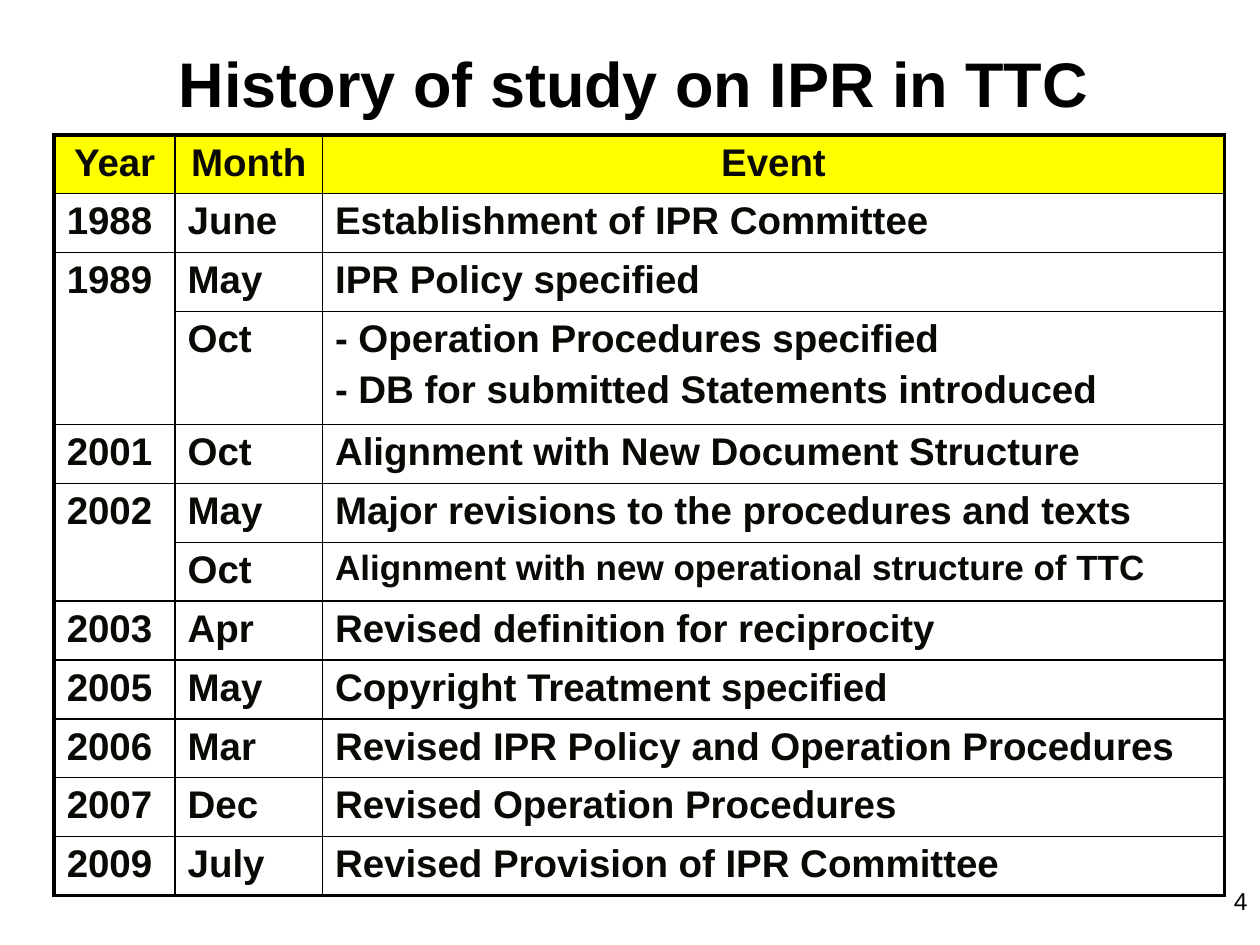
from lxml import etree
from pptx import Presentation
from pptx.dml.color import RGBColor
from pptx.enum.text import MSO_ANCHOR, PP_ALIGN
from pptx.oxml.ns import qn
from pptx.util import Inches, Pt

LEFT, CENTER, RIGHT = PP_ALIGN.LEFT, PP_ALIGN.CENTER, PP_ALIGN.RIGHT
MIDDLE = MSO_ANCHOR.MIDDLE
TITLE_ONLY = 5
BLACK, INK, YELLOW = "000000", "0B0905", "FFFF00"
THIN, THICK = 1, 2.25

TITLE_FONT = {"name": "Arial", "size": Pt(36), "bold": True}
NUMBER_FONT = {"name": "Arial", "size": Pt(14), "bold": False}
CELL_FONT = {"name": "Arial", "size": Pt(22), "bold": True}
SMALL_CELL_FONT = {**CELL_FONT, "size": Pt(20)}

COLUMN_WIDTHS = [0.96, 1.17, 7.16]
ROW_HEIGHT, TALL_ROW_HEIGHT = 0.46, 0.9
LONG_EVENT = "Alignment with new operational structure of TTC"
HISTORY = [
    ("Year", "Month", "Event"),
    ("1988", "June", "Establishment of IPR Committee"),
    ("1989", "May", "IPR Policy specified"),
    ("", "Oct", "- Operation Procedures specified\n"
                "- DB for submitted Statements introduced"),
    ("2001", "Oct", "Alignment with New Document Structure"),
    ("2002", "May", "Major revisions to the procedures and texts"),
    ("", "Oct", LONG_EVENT),
    ("2003", "Apr", "Revised definition for reciprocity"),
    ("2005", "May", "Copyright Treatment specified"),
    ("2006", "Mar", "Revised IPR Policy and Operation Procedures"),
    ("2007", "Dec", "Revised Operation Procedures"),
    ("2009", "July", "Revised Provision of IPR Committee"),
]


def color(value):
    return RGBColor.from_string(value)


def write(frame, text, font, ink, align):
    frame.text = text
    for index, para in enumerate(frame.paragraphs):
        para.alignment = align
        if index:
            para.space_before = Pt(font["size"].pt * 0.2)
        for target in [para.font] + [span.font for span in para.runs]:
            for name, value in font.items():
                setattr(target, name, value)
            target.color.rgb = color(ink)


def place(shape, box):
    for name, value in zip(("left", "top", "width", "height"), box):
        setattr(shape, name, Inches(value))


def add_title(page, box):
    title = page.shapes.title
    place(title, box)
    title.text_frame.vertical_anchor = MIDDLE
    write(title.text_frame, "History of study on IPR in TTC", TITLE_FONT, BLACK, CENTER)


def add_page_number(page, box):
    number = page.shapes.add_textbox(*map(Inches, box))
    number.text_frame.word_wrap = True
    write(number.text_frame, "4", NUMBER_FONT, BLACK, RIGHT)


def set_borders(cell, widths):
    properties = cell._tc.get_or_add_tcPr()
    for side in "LRTB":
        width = widths[side]
        line = etree.SubElement(properties, qn(f"a:ln{side}"), w=str(Pt(width)))
        if width:
            fill = etree.SubElement(line, qn("a:solidFill"))
            etree.SubElement(fill, qn("a:srgbClr"), val=BLACK)
        else:
            etree.SubElement(line, qn("a:noFill"))


def border_widths(row, column):
    last_row, last_column = len(HISTORY) - 1, len(COLUMN_WIDTHS) - 1
    continued = row < last_row and not HISTORY[row + 1][column]
    return {
        "L": THICK if column == 0 else THIN,
        "R": THICK if column == last_column else THIN,
        "T": THICK if row == 0 else THIN if HISTORY[row][column] else 0,
        "B": THICK if row == last_row else 0 if continued else THIN,
    }


def add_history_table(page, box):
    frame = page.shapes.add_table(len(HISTORY), len(COLUMN_WIDTHS), *map(Inches, box))
    table = frame.table
    table.first_row = table.horz_banding = False
    for column, width in zip(table.columns, COLUMN_WIDTHS):
        column.width = Inches(width)
    for row, entries in enumerate(HISTORY):
        tall = "\n" in entries[-1]
        table.rows[row].height = Inches(TALL_ROW_HEIGHT if tall else ROW_HEIGHT)
        for column, text in enumerate(entries):
            cell = table.cell(row, column)
            set_borders(cell, border_widths(row, column))
            if row == 0:
                cell.fill.solid()
                cell.fill.fore_color.rgb = color(YELLOW)
            else:
                cell.fill.background()
            font = SMALL_CELL_FONT if text == LONG_EVENT else CELL_FONT
            write(cell.text_frame, text, font, INK, LEFT if row else CENTER)


def main():
    deck = Presentation()
    deck.slide_width, deck.slide_height = Inches(10), Inches(7.5)
    page = deck.slides.add_slide(deck.slide_layouts[TITLE_ONLY])
    add_title(page, (0.33, 0.05, 9.4, 1.21))
    add_page_number(page, (7.67, 6.98, 2.33, 0.52))
    add_history_table(page, (0.43, 1.07, 9.29, 5.96))
    deck.save("out.pptx")


if __name__ == "__main__":
    main()
